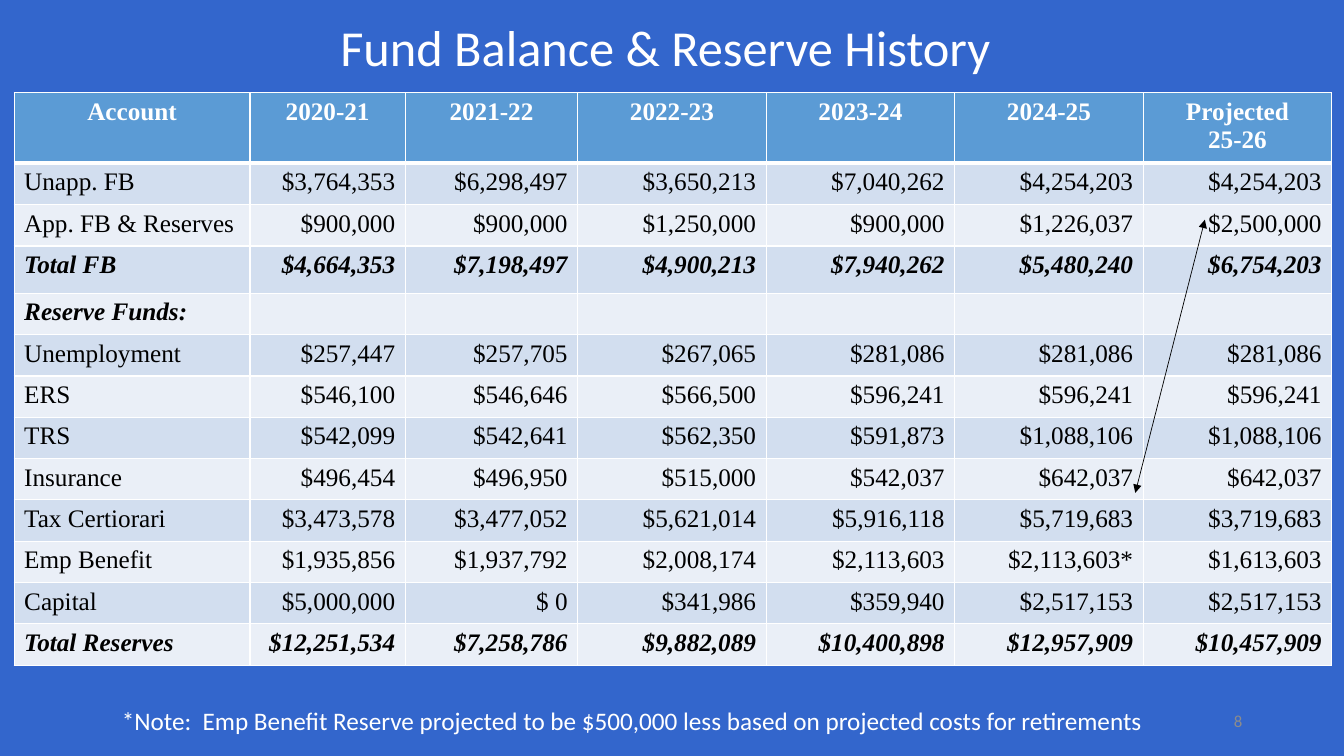
"""Build the fund balance and reserve history slide."""
from lxml.etree import SubElement
from pptx import Presentation
from pptx.dml.color import RGBColor
from pptx.enum.shapes import MSO_CONNECTOR
from pptx.enum.text import MSO_ANCHOR, PP_ALIGN as Align
from pptx.oxml.ns import qn
from pptx.util import Inches, Pt

TITLE = "Fund Balance & Reserve History"
NOTE = ("*Note:  Emp Benefit Reserve projected to be $500,000 less "
        "based on projected costs for retirements")
PAGE_NUMBER = "8"
HEADER = ["Account", "2020-21", "2021-22", "2022-23", "2023-24", "2024-25", "Projected\v25-26"]
ACCOUNTS = [
    ["Unapp. FB", "$3,764,353", "$6,298,497", "$3,650,213", "$7,040,262", "$4,254,203", "$4,254,203"],
    ["App. FB & Reserves", "$900,000", "$900,000", "$1,250,000", "$900,000", "$1,226,037", "$2,500,000"],
    ["Total FB", "$4,664,353", "$7,198,497", "$4,900,213", "$7,940,262", "$5,480,240", "$6,754,203"],
    ["Reserve Funds:", "", "", "", "", "", ""],
    ["Unemployment", "$257,447", "$257,705", "$267,065", "$281,086", "$281,086", "$281,086"],
    ["ERS", "$546,100", "$546,646", "$566,500", "$596,241", "$596,241", "$596,241"],
    ["TRS", "$542,099", "$542,641", "$562,350", "$591,873", "$1,088,106", "$1,088,106"],
    ["Insurance", "$496,454", "$496,950", "$515,000", "$542,037", "$642,037", "$642,037"],
    ["Tax Certiorari", "$3,473,578", "$3,477,052", "$5,621,014", "$5,916,118", "$5,719,683", "$3,719,683"],
    ["Emp Benefit", "$1,935,856", "$1,937,792", "$2,008,174", "$2,113,603", "$2,113,603*", "$1,613,603"],
    ["Capital", "$5,000,000", "$ 0", "$341,986", "$359,940", "$2,517,153", "$2,517,153"],
    ["Total Reserves", "$12,251,534", "$7,258,786", "$9,882,089", "$10,400,898", "$12,957,909", "$10,457,909"],
]
EMPHASIZED = {"Total FB", "Reserve Funds:", "Total Reserves"}
COLUMN_WIDTHS = [2.34, 1.54, 1.71] + [1.87] * 4
ROW_HEIGHTS = [0.64, 0.41, 0.41, 0.47] + [0.41] * 9
COLORS = {
    "background": "3366CC", "header": "5B9BD5", "odd": "D2DEEF", "even": "EAEFF7",
    "white": "FFFFFF", "black": "000000", "number": "8C8C8C",
}


def rgb(name):
    return RGBColor.from_string(COLORS[name])


def style(para, size, color, align=Align.LEFT, font="Calibri", bold=False, italic=False):
    para.alignment = align
    para.font.name, para.font.size = font, Pt(size)
    para.font.bold, para.font.italic = bold, italic
    para.font.color.rgb = rgb(color)


def add_text(page, text, left, width, size, color, align):
    box = page.shapes.add_textbox(Inches(left), Inches(6.95), Inches(width), Inches(0.4))
    box.text_frame.word_wrap = True
    box.text_frame.vertical_anchor = MSO_ANCHOR.MIDDLE
    box.text_frame.text = text
    style(box.text_frame.paragraphs[0], size, color, align)


def set_borders(cell, row):
    widths = {"lnL": 1, "lnR": 1, "lnT": 3 if row == 1 else 1, "lnB": 3 if row == 0 else 1}
    properties = cell._tc.get_or_add_tcPr()
    for side, width in widths.items():
        line = SubElement(properties, qn(f"a:{side}"), w=str(Pt(width)))
        solid = SubElement(line, qn("a:solidFill"))
        SubElement(solid, qn("a:srgbClr"), val=COLORS["white"])


def add_fund_table(page):
    rows = [HEADER] + ACCOUNTS
    table = page.shapes.add_table(
        len(rows), len(HEADER), Inches(0.14), Inches(0.92),
        Inches(sum(COLUMN_WIDTHS)), Inches(sum(ROW_HEIGHTS))).table
    for column, width in zip(table.columns, COLUMN_WIDTHS):
        column.width = Inches(width)
    for table_row, height in zip(table.rows, ROW_HEIGHTS):
        table_row.height = Inches(height)
    for row, values in enumerate(rows):
        heading = row == 0
        emphasized = values[0] in EMPHASIZED
        fill = "header" if heading else "odd" if row % 2 else "even"
        for column, value in enumerate(values):
            cell = table.cell(row, column)
            set_borders(cell, row)
            cell.fill.solid()
            cell.fill.fore_color.rgb = rgb(fill)
            cell.text = value
            align = Align.CENTER if heading else Align.RIGHT if column else Align.LEFT
            style(cell.text_frame.paragraphs[0], 18, "white" if heading else "black",
                  align, "Times New Roman", heading or emphasized, emphasized)


def add_transfer_arrow(page):
    arrow = page.shapes.add_connector(
        MSO_CONNECTOR.STRAIGHT, Inches(11.95), Inches(2.18), Inches(11.26), Inches(4.89))
    arrow.line.color.rgb = rgb("black")
    arrow.line.width = Pt(0.5)
    line = arrow.line._get_or_add_ln()
    for end in ("headEnd", "tailEnd"):
        SubElement(line, qn(f"a:{end}"), type="triangle")
    SubElement(arrow._element.spPr, qn("a:effectLst"))


def main():
    deck = Presentation()
    deck.slide_width, deck.slide_height = Inches(13.33), Inches(7.5)
    page = deck.slides.add_slide(deck.slide_layouts[5])
    page.background.fill.solid()
    page.background.fill.fore_color.rgb = rgb("background")

    title = page.shapes.title
    title.left, title.top = Inches(1.18), Inches(0.2)
    title.width, title.height = Inches(10.84), Inches(0.62)
    title.text_frame.text = TITLE
    title.text_frame.vertical_anchor = MSO_ANCHOR.BOTTOM
    title.text_frame.paragraphs[0].line_spacing = 0.9
    style(title.text_frame.paragraphs[0], 36, "white", Align.CENTER)

    add_text(page, PAGE_NUMBER, 9.42, 3, 12, "number", Align.RIGHT)
    add_fund_table(page)
    add_transfer_arrow(page)
    add_text(page, NOTE, 1.11, 10.63, 18, "white", Align.LEFT)
    deck.save("out.pptx")


if __name__ == "__main__":
    main()
